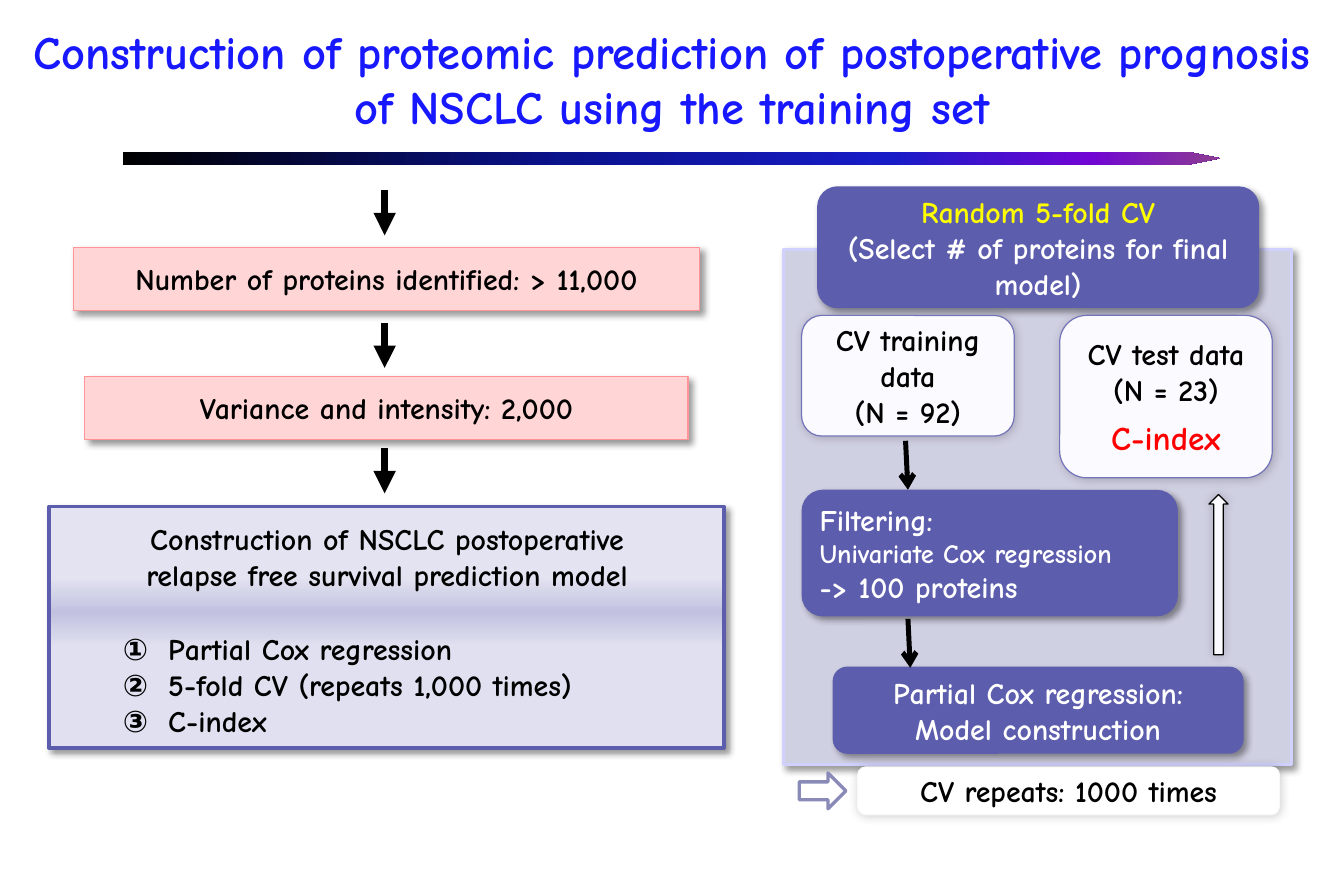
from dataclasses import dataclass
from lxml import etree
from pptx import Presentation
from pptx.dml.color import RGBColor
from pptx.enum.shapes import MSO_CONNECTOR, MSO_SHAPE
from pptx.enum.text import MSO_ANCHOR, MSO_AUTO_SIZE, PP_ALIGN
from pptx.oxml.ns import qn
from pptx.util import Inches, Pt

RECT, ROUND = MSO_SHAPE.RECTANGLE, MSO_SHAPE.ROUNDED_RECTANGLE
PLATE, UP, RIGHT = MSO_SHAPE.PENTAGON, MSO_SHAPE.UP_ARROW, MSO_SHAPE.RIGHT_ARROW
LEFT, CENTER = PP_ALIGN.LEFT, PP_ALIGN.CENTER
STRAIGHT = MSO_CONNECTOR.STRAIGHT


@dataclass(frozen=True)
class Theme:
    font: str = "Comic Neue"
    head: int = 28
    big: int = 20
    body: int = 18
    small: int = 16
    black: str = "000000"
    white: str = "FFFFFF"
    title: str = "1818FF"
    red: str = "FF0000"
    yellow: str = "FFFF00"
    indigo: str = "5D5DAE"
    edge: str = "7474BA"
    pale: str = "FBFBFF"
    frame: str = "D0D0E3"
    rim: str = "D1D1FF"
    mist: str = "F9F9F9"
    hollow: str = "8A8AB9"
    pink: str = "FFD5D6"
    rose: str = "FF9396"
    bar: tuple = ((0, "000000"), (40, "0A128C"), (70, "181CC7"),
                  (88, "7005D4"), (100, "8C3D91"))
    panel: tuple = ((29, "E3E3F1"), (44, "C2C2E0"), (58, "E0E0F0"))
    # Shadows: opacity %, blur pt, distance pt, angle
    deep: tuple = (40, 4, 3, 45)
    soft: tuple = (20, 6, 1, 45)
    glow: tuple = (20, 6, 0, 315)


T = Theme()


def rgb(code):
    return RGBColor.from_string(code)


def node(parent, tag, **attrs):
    return etree.SubElement(parent, qn(tag), {k: str(v) for k, v in attrs.items()})


def write(frame, lines, align=CENTER):
    """Each line is (text, size, colour)."""
    frame.word_wrap = True
    for i, (text, size, color) in enumerate(lines):
        para = frame.add_paragraph() if i else frame.paragraphs[0]
        para.text, para.alignment = text, align
        font = para.font
        font.name, font.size, font.bold = T.font, Pt(size), True
        font.color.rgb = rgb(color)


def body(*texts, color=T.black):
    return [(text, T.body, color) for text in texts]


def blend(shape, stops, angle):
    grad = etree.Element(qn("a:gradFill"), rotWithShape="1")
    group = node(grad, "a:gsLst")
    for pos, color in stops:
        node(node(group, "a:gs", pos=pos * 1000), "a:srgbClr", val=color)
    node(grad, "a:lin", ang=angle * 60000, scaled=0)
    shape.element.spPr.insert(2, grad)


def shade(shape, look):
    alpha, blur, dist, angle = look
    effects = shape.element.spPr.find(qn("a:effectLst"))
    outer = node(effects, "a:outerShdw", blurRad=Pt(blur), dist=Pt(dist),
                 dir=angle * 60000, algn="tl", rotWithShape=0)
    node(node(outer, "a:srgbClr", val=T.black), "a:alpha", val=alpha * 1000)


def block(slide, kind, x, y, w, h, fill=None, line=None, width=0.75,
          look=None, lines=(), align=CENTER):
    shape = slide.shapes.add_shape(kind, Inches(x), Inches(y), Inches(w), Inches(h))
    if fill:
        shape.fill.solid()
        shape.fill.fore_color.rgb = rgb(fill)
    if line:
        shape.line.color.rgb = rgb(line)
        shape.line.width = Pt(width)
    else:
        shape.line.fill.background()
    shape.shadow.inherit = False
    if look:
        shade(shape, look)
    write(shape.text_frame, lines, align)
    return shape


def arrow(slide, x, y, dx, dy, width, tip):
    link = slide.shapes.add_connector(
        STRAIGHT, Inches(x), Inches(y), Inches(x + dx), Inches(y + dy))
    link.line.color.rgb = rgb(T.black)
    link.line.width = Pt(width)
    props = link.element.spPr
    node(props.find(qn("a:ln")), "a:tailEnd", type=tip)
    node(props, "a:effectLst")


def header(slide, x, y, w, h):
    title = slide.shapes.title
    title.left, title.top, title.width, title.height = map(Inches, (x, y, w, h))
    frame = title.text_frame
    frame.auto_size, frame.vertical_anchor = MSO_AUTO_SIZE.NONE, MSO_ANCHOR.TOP
    write(frame, [("Construction of proteomic prediction of postoperative "
                   "prognosis of NSCLC using the training set", T.head, T.title)])
    bar = block(slide, PLATE, x + 0.93, y + 1.13, 9.18, 0.11)
    bar.adjustments[0] = 2.476
    blend(bar, T.bar, 0)


def number(frame):
    for para in frame.paragraphs:
        props = para._p.get_or_add_pPr()
        props.set("marL", str(Inches(0.38)))
        props.set("indent", str(-Inches(0.38)))
        mark = etree.Element(qn("a:buAutoNum"), type="circleNumDbPlain")
        props.insert(0, mark)


def steps(slide, x, y, w):
    # Arrows and filter boxes
    for dy in (0, 1.11, 2.16):
        arrow(slide, x + 2.81, y + dy, 0, 0.38, 4.5, "triangle")
    for dy, wide, text in ((0.48, 5.24, "Number of proteins identified: > 11,000"),
                           (1.56, 5.05, "Variance and intensity: 2,000")):
        block(slide, RECT, x + (w - wide) / 2, y + dy, wide, 0.53,
              T.pink, T.rose, look=T.deep, lines=body(text))
    # Model panel
    top = y + 2.65
    panel = block(slide, RECT, x, top, w, 2.02, line=T.indigo, width=2.25, look=T.deep)
    blend(panel, T.panel, 90)
    goal = slide.shapes.add_textbox(
        Inches(x + 0.46), Inches(top + 0.12), Inches(4.74), Inches(0.61)).text_frame
    goal.margin_left = goal.margin_right = goal.margin_top = goal.margin_bottom = 0
    write(goal, body("Construction of NSCLC postoperative relapse free "
                     "survival prediction model"))
    tasks = slide.shapes.add_textbox(
        Inches(x + 0.52), Inches(top + 0.99), Inches(4.61), Inches(1.01)).text_frame
    write(tasks, body("Partial Cox regression", "5-fold CV (repeats 1,000 times)",
                      "C-index"), LEFT)
    number(tasks)


def folds(slide, x, y, w):
    block(slide, RECT, x, y + 0.53, w, 4.31, T.frame, T.rim, 2, T.deep)
    # Repeat note
    block(slide, ROUND, x + 0.62, y + 4.86, 3.53, 0.4, T.white, T.mist,
          look=T.glow, lines=body("CV repeats: 1000 times"))
    block(slide, RIGHT, x + 0.13, y + 4.91, 0.39, 0.3, T.white, T.hollow, 2)
    # Split into training and test data
    block(slide, ROUND, x + 0.28, y, 3.7, 1.02, T.indigo, look=T.deep,
          lines=body("Random 5-fold CV", color=T.yellow)
          + body("(Select # of proteins for final model)", color=T.white))
    block(slide, ROUND, x + 0.15, y + 1.08, 1.78, 1.01, T.pale, T.edge,
          look=T.soft, lines=body("CV training data", "(N = 92)"))
    test = block(slide, ROUND, x + 2.31, y + 1.08, 1.78, 1.36, T.pale, T.edge,
                 look=T.soft, lines=body("CV test data", "(N = 23)")
                 + [("C-index", T.big, T.red)])
    test.text_frame.paragraphs[2].space_before = Pt(6)
    # Filtering and model
    block(slide, ROUND, x + 0.15, y + 2.54, 3.15, 1.06, T.indigo, look=T.deep,
          lines=[("Filtering:", T.body, T.white),
                 ("Univariate Cox regression", T.small, T.white),
                 ("-> 100 proteins", T.body, T.white)], align=LEFT)
    block(slide, ROUND, x + 0.41, y + 4.02, 3.44, 0.73, T.indigo, look=T.deep,
          lines=body("Partial Cox regression:", "Model construction", color=T.white))
    # Flow arrows
    for dx, dy in ((1.02, 2.13), (1.04, 3.62)):
        arrow(slide, x + dx, y + dy, 0.02, 0.41, 3, "arrow")
    block(slide, UP, x + 3.56, y + 2.58, 0.16, 1.34, T.pale, T.black, look=T.glow)


def main():
    deck = Presentation()
    deck.slide_width, deck.slide_height = Inches(11.25), Inches(7.5)
    slide = deck.slides.add_slide(deck.slide_layouts[5])
    header(slide, 0.1, 0.14, 11.05, 1.04)
    steps(slide, 0.41, 1.59, 5.65)
    folds(slide, 6.56, 1.56, 4.25)
    deck.save("out.pptx")


if __name__ == "__main__":
    main()
